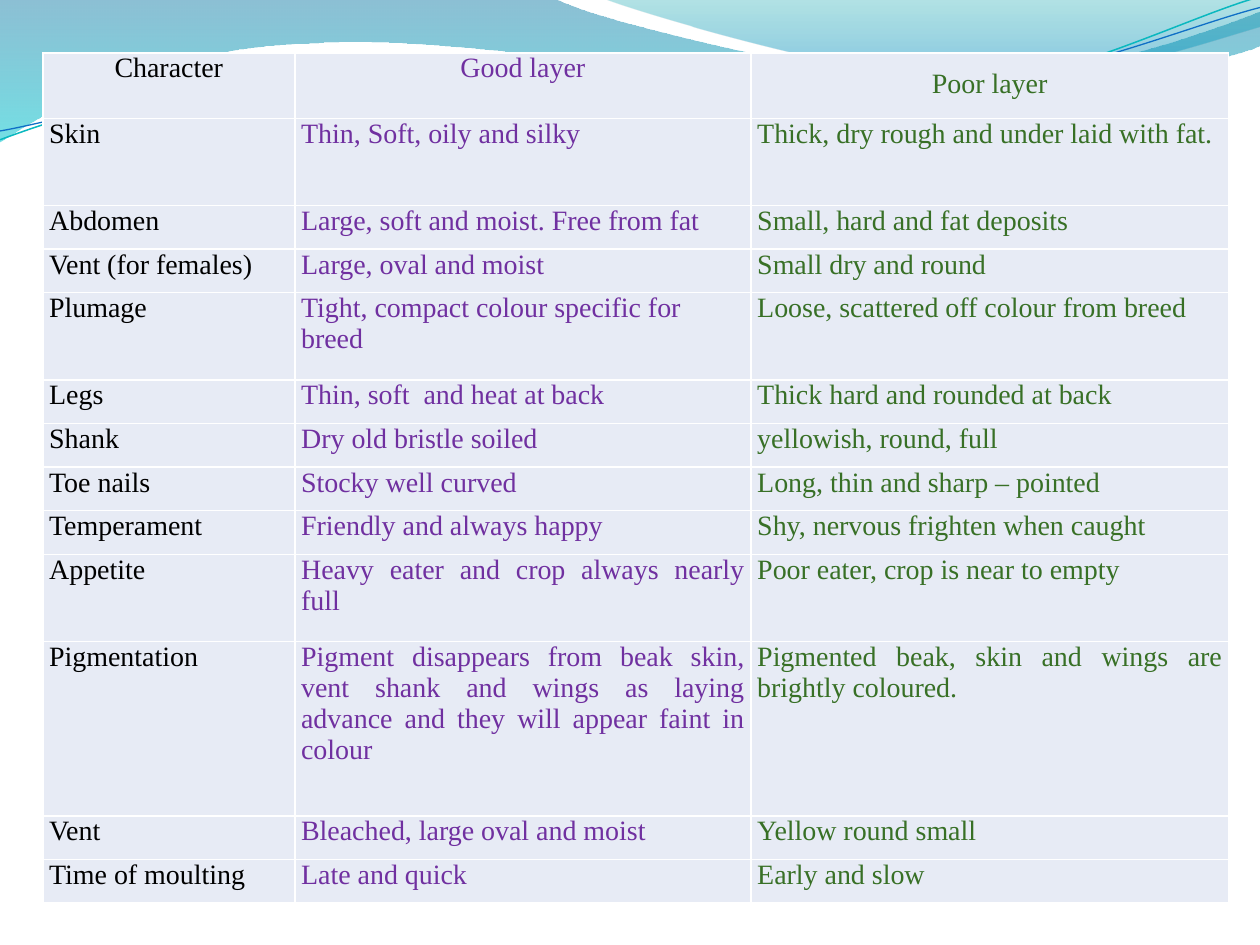
import math

import lxml.etree
import pptx
import pptx.dml.color
import pptx.enum.text
import pptx.oxml.ns
import pptx.util

Inches, Pt = pptx.util.Inches, pptx.util.Pt
RGB = pptx.dml.color.RGBColor.from_string
ALIGN = pptx.enum.text.PP_ALIGN
qn = pptx.oxml.ns.qn


class Theme:
    font = "Times New Roman"
    size = Pt(16)
    cell = "E7EBF5"
    text = ["000000", "7030A0", "387026"]
    # Stops: position, colour, opacity in percent
    deep = [(0, "0074A1", 45), (1, "00C6CF", 55)]
    pale = [(0, "00A1A9", 30), (0.8, "008BBF", 45)]
    teal, blue = "0AB8BF", "0F6FC6"


def turn(x, y, center, angle):
    """Return the point, in EMU, turned clockwise about the center."""
    dx, dy, a = x - center[0], y - center[1], math.radians(angle)
    return (Inches(center[0] + dx * math.cos(a) - dy * math.sin(a)),
            Inches(center[1] + dx * math.sin(a) + dy * math.cos(a)))


def draw(start, parts, close, center=(0, 0), angle=0):
    """Add a freeform; a part is a line (2 numbers) or a cubic curve (6)."""
    ends = [turn(*part[-2:], center, angle) for part in parts]
    pen = slide.shapes.build_freeform(*turn(*start, center, angle), scale=1.0)
    pen.add_line_segments(ends, close=close)
    shape = pen.convert_to_shape()
    shape.shadow.inherit = False
    for line, part in zip(list(shape._element.iter(qn("a:lnTo"))), parts):
        if len(part) == 6:
            line.tag = qn("a:cubicBezTo")
            for spot, pair in enumerate((part[:2], part[2:4])):
                x, y = turn(*pair, center, angle)
                knot = lxml.etree.Element(qn("a:pt"), x=str(x - shape.left), y=str(y - shape.top))
                line.insert(spot, knot)
    shape.rotation = -angle % 360
    return shape


deck = pptx.Presentation()
deck.slide_width, deck.slide_height = Inches(10), Inches(7.5)
slide = deck.slides.add_slide(deck.slide_layouts[6])

# Waves along the top edge
waves = [
    ((0, 0), [(4.4, -0.01), (4.76, 0.17, 6.64, 0.63, 7.58, 0.63),
              (8.53, 0.63, 9.58, 0.26, 10, 0.09), (10.01, 0.36),
              (9.83, 0.44, 8.7, 0.76, 7.46, 0.75), (6.22, 0.75, 3.82, 0.28, 2.57, 0.34),
              (1.29, 0.36, 0.46, 0.83, -0.01, 1.13), (0, 0)], Theme.deep),
    ((4.79, -0.01), [(5.09, 0.11, 6.82, 0.62, 7.69, 0.65),
                     (8.56, 0.69, 9.61, 0.32, 10, 0.21), (10, 0), (4.79, -0.01)], Theme.pale),
]
for start, parts, stops in waves:
    wave = draw(start, parts, True)
    wave.line.fill.background()
    wave.fill.gradient()
    wave.fill.gradient_angle = 270
    for stop, (place, color, opacity) in zip(wave.fill.gradient_stops, stops):
        stop.position = place
        stop.color.rgb = RGB(color)
    tags = wave.fill._xPr.iter(qn("a:srgbClr"))
    for tag, (place, color, opacity) in zip(tags, stops):
        lxml.etree.SubElement(tag, qn("a:alpha"), val=str(opacity * 1000))

# Thin curves over the waves, slightly tilted
curves = [
    ((0, 1.11), [(0.48, 0.93, 1.58, 0.57, 2.77, 0.52), (3.95, 0.47, 5.93, 0.89, 7.13, 0.8),
                 (8.33, 0.71, 9.38, 0.15, 9.98, -0.02)], Theme.teal, 0.85),
    ((0, 1.04), [(0.47, 0.96, 1.64, 0.61, 2.83, 0.56), (4.03, 0.51, 5.97, 0.84, 7.17, 0.75),
                 (8.36, 0.67, 9.41, 0.21, 10, 0.06)], Theme.blue, 0.75),
]
for start, parts, color, width in curves:
    curve = draw(start, parts, False, (5, 0.58), 2.7)
    curve.fill.background()
    curve.line.color.rgb = RGB(color)
    curve.line.width = Pt(width)

# Comparison table: height in text lines, then one text per column
rows = [
    (1.5, "Character", "Good layer", "Poor layer"),
    (2, "Skin", "Thin, Soft, oily and silky", "Thick, dry rough and under laid with fat."),
    (1, "Abdomen", "Large, soft and moist. Free from fat", "Small, hard and fat deposits"),
    (1, "Vent (for females)", "Large, oval and moist", "Small dry and round"),
    (2, "Plumage", "Tight, compact colour specific for\nbreed",
     "Loose, scattered off colour from breed"),
    (1, "Legs", "Thin, soft  and heat at back", "Thick hard and rounded at back"),
    (1, "Shank", "Dry old bristle soiled", "yellowish, round, full"),
    (1, "Toe nails", "Stocky well curved", "Long, thin and sharp – pointed"),
    (1, "Temperament", "Friendly and always happy", "Shy, nervous frighten when caught"),
    (2, "Appetite", "Heavy eater and crop always nearly full", "Poor eater, crop is near to empty"),
    (4, "Pigmentation",
     "Pigment disappears from beak skin, vent shank and wings as laying advance "
     "and they will appear faint in colour",
     "Pigmented beak, skin and wings are brightly coloured."),
    (1, "Vent", "Bleached, large oval and moist", "Yellow round small"),
    (1, "Time of moulting", "Late and quick", "Early and slow"),
]
widths = [2, 3.62, 3.79]
tall = 6.75
unit = tall / sum(row[0] for row in rows)
frame = slide.shapes.add_table(len(rows), len(widths), Inches(0.34), Inches(0.42),
                               Inches(sum(widths)), Inches(tall))
table = frame.table
table.first_row = table.horz_banding = False
for column, width in zip(table.columns, widths):
    column.width = Inches(width)

for r, (lines, *texts) in enumerate(rows):
    table.rows[r].height = Inches(lines * unit)
    for c, text in enumerate(texts):
        cell = table.cell(r, c)
        cell.fill.solid()
        cell.fill.fore_color.rgb = RGB(Theme.cell)
        cell.margin_left = cell.margin_right = Inches(0.05)
        cell.margin_top = cell.margin_bottom = 0
        cell.text_frame.text = text
        for para in cell.text_frame.paragraphs:
            para.alignment = ALIGN.JUSTIFY if r else ALIGN.CENTER
            for run in para.runs:
                run.font.name, run.font.size = Theme.font, Theme.size
                run.font.color.rgb = RGB(Theme.text[c])
table.cell(0, 2).text_frame.paragraphs[0].line_spacing = 1.5

deck.save("out.pptx")
